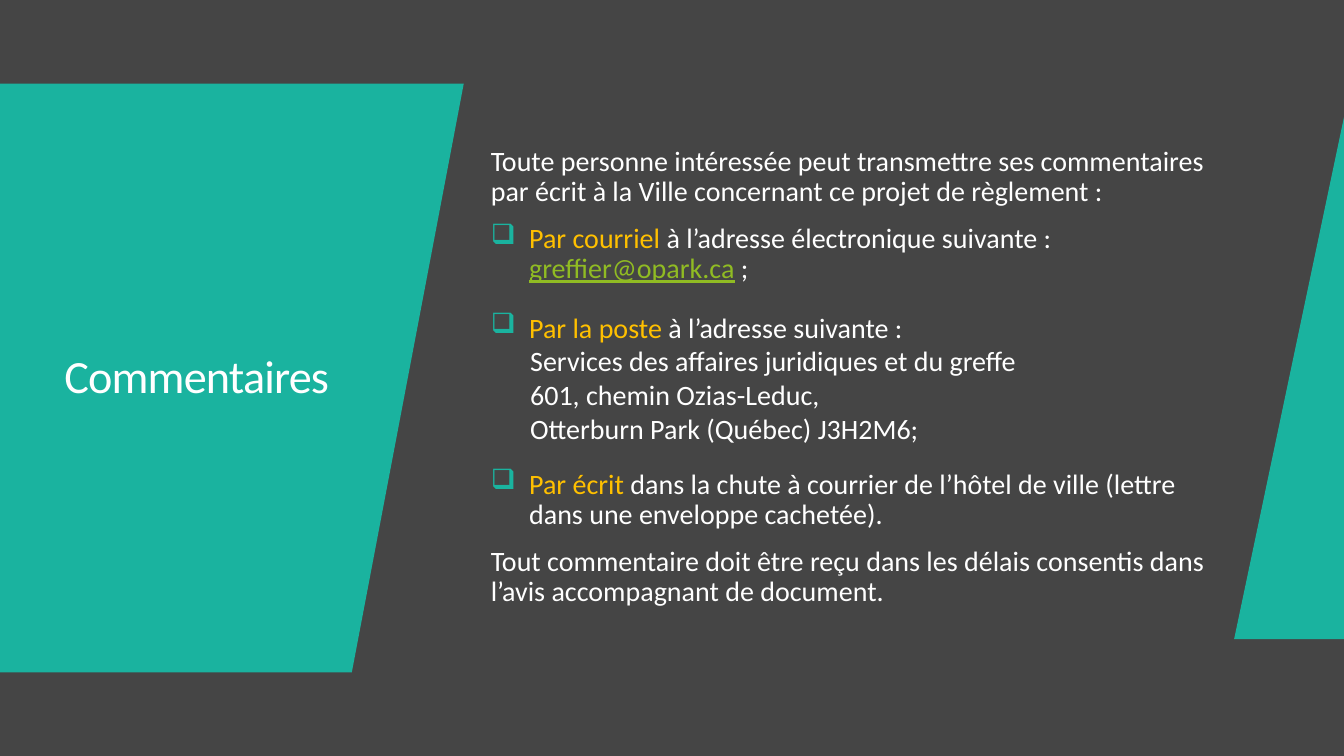
from lxml import etree
from pptx import Presentation
from pptx.dml.color import RGBColor
from pptx.enum.text import MSO_ANCHOR, PP_ALIGN
from pptx.oxml.ns import qn
from pptx.util import Inches, Pt

MIDDLE, LEFT = MSO_ANCHOR.MIDDLE, PP_ALIGN.LEFT
GREY, TEAL, WHITE, AMBER, GREEN = "454545", "1AB39F", "FFFFFF", "FFC000", "90BB23"


def rgb(color):
    return RGBColor.from_string(color)


class Deck:
    font = "Calibri"

    def __init__(self, width, height):
        self.prs = Presentation()
        self.prs.slide_width, self.prs.slide_height = Inches(width), Inches(height)
        self.s = self.prs.slides.add_slide(self.prs.slide_layouts[6])

    def background(self, color):
        fill = self.s.background.fill
        fill.solid()
        fill.fore_color.rgb = rgb(color)

    def polygon(self, points, color):
        (x, y), *rest = [(Inches(px), Inches(py)) for px, py in points]
        builder = self.s.shapes.build_freeform(x, y)
        builder.add_line_segments(rest, close=True)
        sp = builder.convert_to_shape()
        sp.shadow.inherit = False
        sp.fill.solid()
        sp.fill.fore_color.rgb = rgb(color)
        sp.line.fill.background()

    def text_box(self, x, y, w, h):
        sp = self.s.shapes.add_textbox(Inches(x), Inches(y), Inches(w), Inches(h))
        tf = sp.text_frame
        tf.word_wrap = True
        tf.vertical_anchor = MIDDLE
        return tf

    def paragraph(self, tf, runs, size, first=False, before=0, spacing=0.9,
                  indent=0, bullet=False, track=0):
        p = tf.paragraphs[0] if first else tf.add_paragraph()
        p.alignment = LEFT
        p.line_spacing = spacing
        p.space_before = Pt(before)
        pPr = p._p.get_or_add_pPr()
        if indent:
            pPr.set("marL", str(Inches(indent)))
        if bullet:
            pPr.set("indent", str(-Inches(indent)))
            color = etree.SubElement(pPr, qn("a:buClr"))
            etree.SubElement(color, qn("a:srgbClr"), val=TEAL)
            etree.SubElement(pPr, qn("a:buChar"), char="❑")
        for text, color in runs:
            for i, line in enumerate(text.split("\n")):
                if i:
                    p.add_line_break()
                r = p.add_run()
                r.text = line
                r.font.name = self.font
                r.font.size = Pt(size)
                r.font.color.rgb = rgb(color)
                if color == GREEN:
                    r.font.underline = True
                if track:
                    r._r.get_or_add_rPr().set("spc", str(int(track * 100)))


def main():
    deck = Deck(13.33, 7.5)
    deck.background(GREY)

    # Slanted panels
    deck.polygon([(3.49, 6.67), (0, 6.67), (0, 0.83), (4.6, 0.83)], TEAL)
    deck.polygon([(13.33, 6.34), (12.24, 6.34), (13.33, 1.16)], TEAL)

    # Title
    title = deck.text_box(0.54, 1.84, 3.03, 3.82)
    deck.paragraph(title, [("Commentaires", WHITE)], 33, first=True, track=-0.6)

    # Ways to send comments
    body = deck.text_box(4.77, 0.83, 7.47, 5.83)
    item = dict(indent=0.38, bullet=True)
    address = dict(indent=0.39, spacing=1.0)
    content = [
        ([("Toute personne intéressée peut transmettre ses commentaires par écrit "
           "à la Ville concernant ce projet de règlement :", WHITE)], dict(first=True)),
        ([("Par courriel ", AMBER), ("à l’adresse électronique suivante : ", WHITE),
          ("greffier@opark.ca", GREEN), (" ;", WHITE)], dict(item, before=12)),
        ([("Par la poste ", AMBER), ("à l’adresse suivante :", WHITE)],
         dict(item, before=18, spacing=1.0)),
        ([("Services des affaires juridiques et du greffe\n"
           "601, chemin Ozias-Leduc,", WHITE)], address),
        ([("Otterburn Park (Québec) J3H2M6;", WHITE)], address),
        ([("Par écrit ", AMBER),
          ("dans la chute à courrier de l’hôtel de ville (lettre dans une enveloppe "
           "cachetée).", WHITE)], dict(item, before=18)),
        ([("Tout commentaire doit être reçu dans les délais consentis dans l’avis "
           "accompagnant de document.", WHITE)], dict(before=12)),
    ]
    for runs, layout in content:
        deck.paragraph(body, runs, 20, **layout)

    deck.prs.save("out.pptx")


if __name__ == "__main__":
    main()
